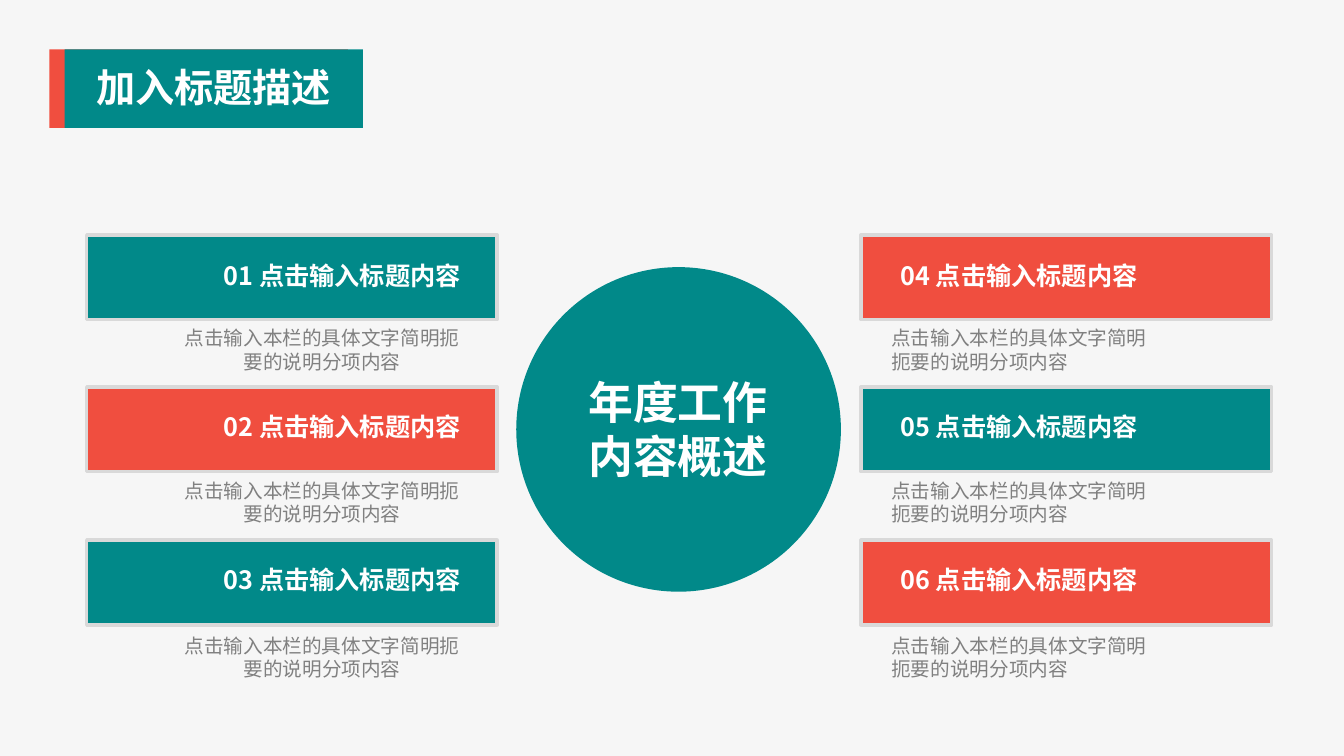
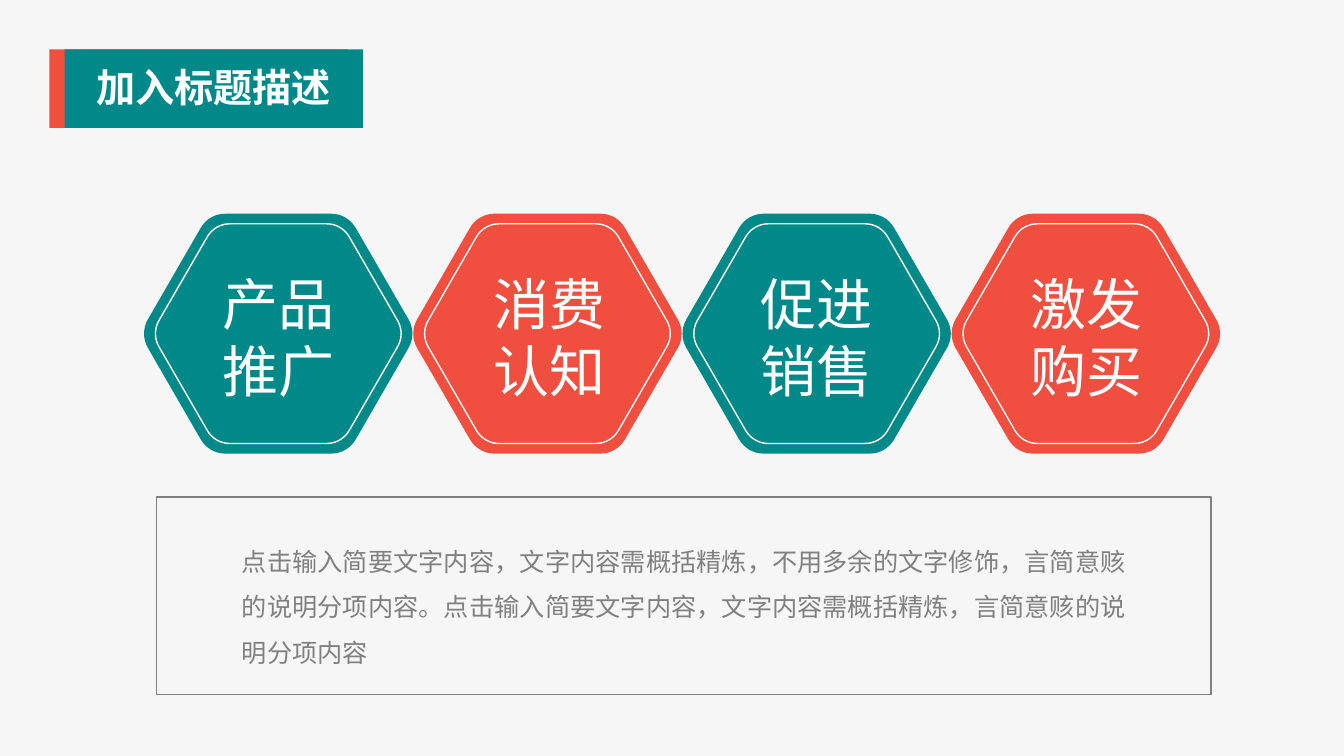
import math
from pptx import Presentation
from pptx import util as u
from pptx.dml.color import RGBColor
from pptx.enum import shapes, text
from pptx.oxml.ns import qn
from lxml import etree

# Content
TITLE = "加入标题描述"
CENTRE = ["年度工作", "内容概述"]
HEADING = "点击输入标题内容"
CAPTION = "点击输入本栏的具体文字简明扼要的说明分项内容"
# Stage name, label left, label width
STAGES = [("产品推广", 1.97, 1.58), ("消费认知", 4.67, 1.55),
          ("促进销售", 7.41, 1.37), ("激发购买", 10.07, 1.41)]
SUMMARY = ("点击输入简要文字内容，文字内容需概括精炼，不用多余的文字修饰，"
           "言简意赅的说明分项内容。点击输入简要文字内容，文字内容需概括精炼，"
           "言简意赅的说明分项内容")

# Shared style
FONT = "Noto Sans CJK SC"
COLORS = {"teal": "018989", "red": "F04E3F", "white": "FFFFFF",
          "grey": "808080", "border": "D9D9D9", "back": "F6F6F6"}
PAIR = ("teal", "red")
LEFT, CENTER, RIGHT, JUSTIFY = (text.PP_ALIGN.LEFT, text.PP_ALIGN.CENTER,
                                text.PP_ALIGN.RIGHT, text.PP_ALIGN.JUSTIFY)
RECT, ROUND, OVAL = (shapes.MSO_SHAPE.RECTANGLE, shapes.MSO_SHAPE.ROUNDED_RECTANGLE,
                     shapes.MSO_SHAPE.OVAL)
TOP, MIDDLE = text.MSO_ANCHOR.TOP, text.MSO_ANCHOR.MIDDLE


def rgb(name):
    return RGBColor.from_string(COLORS[name])


def paint(sp, fill=None, line=None, width=1):
    sp.shadow.inherit = False
    if fill:
        sp.fill.solid()
        sp.fill.fore_color.rgb = rgb(fill)
    else:
        sp.fill.background()
    if line:
        sp.line.color.rgb = rgb(line)
        sp.line.width = u.Pt(width)
    else:
        sp.line.fill.background()
    return sp


def add_box(slide, kind, x, y, w, h, fill=None, line=None, width=1):
    sp = slide.shapes.add_shape(kind, *map(u.Inches, (x, y, w, h)))
    return paint(sp, fill, line, width)


def write(sp, lines, size, color="white", bold=False, align=CENTER,
          anchor=TOP, insets=(0, 0), spacing=None):
    tf = sp.text_frame
    tf.word_wrap = True
    tf.vertical_anchor = anchor
    tf.margin_left = tf.margin_right = u.Inches(insets[0])
    tf.margin_top = tf.margin_bottom = u.Inches(insets[1])
    for i, line in enumerate(lines):
        p = tf.add_paragraph() if i else tf.paragraphs[0]
        p.alignment = align
        p.line_spacing = spacing
        r = p.add_run()
        r.text = line
        r.font.size, r.font.bold, r.font.name = u.Pt(size), bold, FONT
        r.font.color.rgb = rgb(color)
        etree.SubElement(r.font._element, qn("a:ea"), typeface=FONT)


def add_text(slide, x, y, w, h, lines, size, **style):
    write(slide.shapes.add_textbox(*map(u.Inches, (x, y, w, h))), lines, size, **style)


def add_hexagon(slide, cx, cy, height, radius, **style):
    """Regular hexagon, each corner rounded by two 30 degree curves."""
    corner = (height / 2 - radius) / math.cos(math.pi / 6)
    pull = radius * 4 / 3 * math.tan(math.radians(30) / 4)
    points, curves = [], {}
    for turn in range(0, 360, 60):
        a = math.radians(turn)
        for step in (-30, 0, 30):
            b = math.radians(turn + step)
            x = cx + corner * math.cos(a) + radius * math.cos(b)
            y = cy + corner * math.sin(a) + radius * math.sin(b)
            dx, dy = -pull * math.sin(b), pull * math.cos(b)
            if step > -30:
                curves[len(points)] = [leaving, (x - dx, y - dy), (x, y)]
            leaving = (x + dx, y + dy)
            points.append((x, y))
    emu = [(u.Inches(x), u.Inches(y)) for x, y in points]
    builder = slide.shapes.build_freeform(*emu[0])
    builder.add_line_segments(emu[1:], close=True)
    sp = paint(builder.convert_to_shape(), **style)
    # Turn the corner segments into curves
    left, top = min(x for x, _ in emu), min(y for _, y in emu)
    segments = list(next(sp._element.iter(qn("a:path"))))
    for i, controls in curves.items():
        segment = segments[i]
        segment.tag = qn("a:cubicBezTo")
        for pt in list(segment):
            segment.remove(pt)
        for x, y in controls:
            etree.SubElement(segment, qn("a:pt"), x=str(u.Inches(x) - left),
                             y=str(u.Inches(y) - top))


def new_slide(prs):
    slide = prs.slides.add_slide(prs.slide_layouts[6])
    add_box(slide, RECT, 0.49, 0.49, 2.96, 0.78, "red")
    add_box(slide, RECT, 0.64, 0.49, 2.96, 0.78, "teal")
    add_text(slide, 0.47, 0.59, 3.3, 0.55, [TITLE], 28, bold=True, insets=(0.07, 0.04))
    return slide


def overview(prs):
    slide = new_slide(prs)
    # Bar left, heading left, alignment, caption left, width, alignment
    columns = [(0.86, 1.45, RIGHT, 1.78, 2.83, CENTER),
               (8.54, 8.93, LEFT, 8.84, 2.68, LEFT)]
    # Bar top, heading top, caption top
    rows = [(2.33, 2.53, 3.37), (3.84, 4.03, 4.88), (5.36, 5.55, 6.42)]
    for col, (x, head_x, align, cap_x, cap_w, cap_align) in enumerate(columns):
        for row, (y, head_y, cap_y) in enumerate(rows):
            bar = add_box(slide, ROUND, x, y, 4.07, 0.84,
                          PAIR[(col + row) % 2], "border", 2.5)
            bar.adjustments[0] = 0
            number = col * len(rows) + row + 1
            add_text(slide, head_x, head_y, 3.12, 0.46, [f"{number:02d} {HEADING}"], 18,
                     bold=True, align=align, insets=(0, 0.05))
            add_text(slide, cap_x, cap_y, cap_w, 0.2, [CAPTION], 14, color="grey",
                     align=cap_align, anchor=MIDDLE, insets=(0, 0.05))
    # Central circle
    add_box(slide, OVAL, 5.12, 2.65, 3.22, 3.22, "teal")
    add_text(slide, 5.52, 3.67, 2.41, 1.18, CENTRE, 32, bold=True, insets=(0.1, 0.05))


def stages(prs):
    slide = new_slide(prs)
    # Framed summary
    add_text(slide, 2.4, 5.27, 8.77, 1.36, [SUMMARY], 18, color="grey",
             align=JUSTIFY, spacing=1.5)
    add_box(slide, RECT, 1.55, 4.93, 10.46, 1.96, line="grey")
    # Hexagons with an inner outline
    for i, (name, x, w) in enumerate(STAGES):
        cx, cy, fill = 2.76 + i * 2.67, 3.31, PAIR[i % 2]
        add_hexagon(slide, cx, cy, 2.38, 0.28, fill=fill)
        write(add_box(slide, RECT, x, 2.67, w, 1.35, fill), [name], 40)
        add_hexagon(slide, cx, cy, 2.18, 0.26, line="white")


def main():
    prs = Presentation()
    prs.slide_width, prs.slide_height = u.Inches(13.33), u.Inches(7.5)
    back = prs.slide_master.background.fill
    back.solid()
    back.fore_color.rgb = rgb("back")
    overview(prs)
    stages(prs)
    prs.save("out.pptx")


if __name__ == "__main__":
    main()
